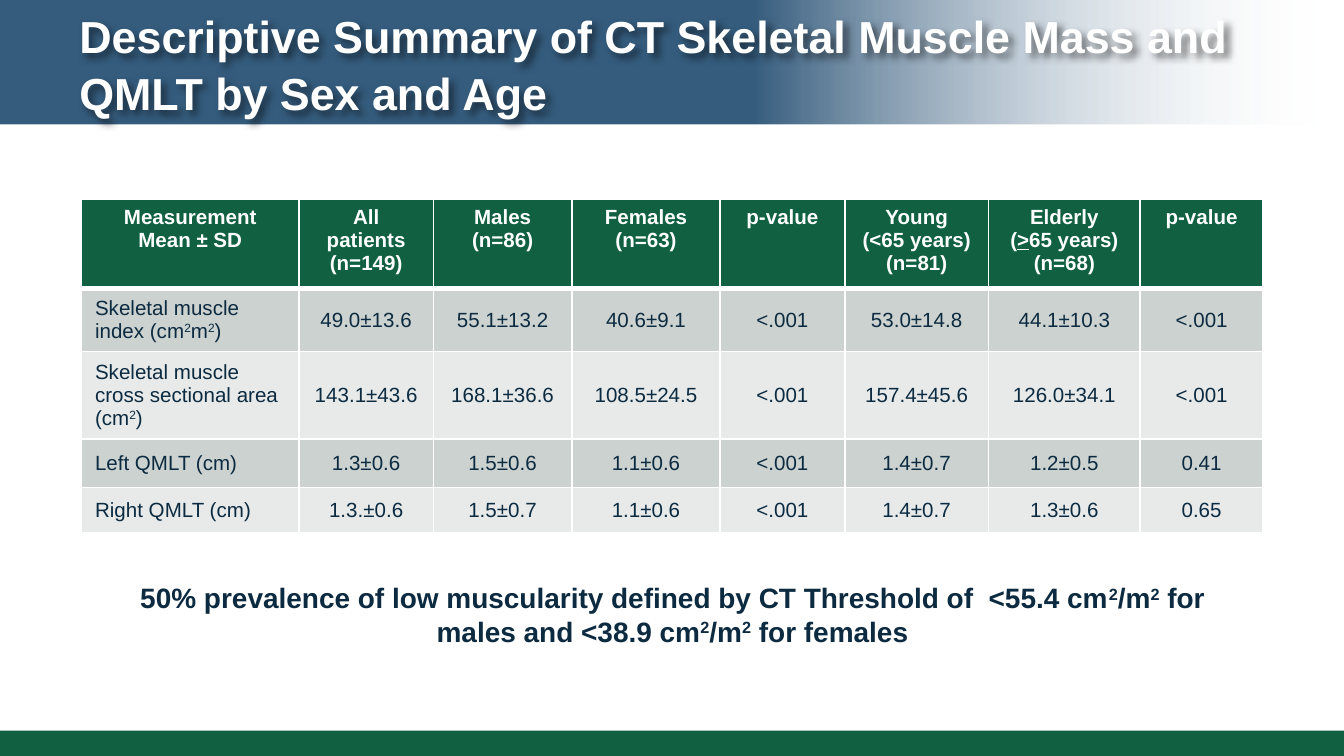
from lxml import etree
from pptx import Presentation
from pptx.dml.color import RGBColor
from pptx.enum import shapes, text
from pptx.oxml import ns
from pptx.util import Pt

NAVY = RGBColor(0x11, 0x3F, 0x66)
INK = RGBColor(0x0C, 0x2A, 0x40)
GREEN = RGBColor(0x10, 0x60, 0x41)
DARK_BAND = RGBColor(0xCC, 0xD2, 0xCF)
LIGHT_BAND = RGBColor(0xE7, 0xEA, 0xE9)
WHITE = RGBColor(0xFF, 0xFF, 0xFF)

# Parts between bars are set as superscript or underlined, see SPECIAL.
TITLE = "Descriptive Summary of CT Skeletal Muscle Mass and QMLT by Sex and Age"
NOTE = ("50% prevalence of low muscularity defined by CT Threshold of  <55.4 cm|2|/m|2|"
        " for males and <38.9 cm|2|/m|2| for females")
ROWS = [
    ["Measurement Mean ± SD", "All patients\n(n=149)", "Males\n(n=86)", "Females\n(n=63)",
     "p-value", "Young\n(<65 years)\n(n=81)", "Elderly\n(|>|65 years)\n(n=68)", "p-value"],
    ["Skeletal muscle index (cm|2|m|2|)", "49.0±13.6", "55.1±13.2", "40.6±9.1",
     "<.001", "53.0±14.8", "44.1±10.3", "<.001"],
    ["Skeletal muscle cross sectional area (cm|2|)", "143.1±43.6", "168.1±36.6",
     "108.5±24.5", "<.001", "157.4±45.6", "126.0±34.1", "<.001"],
    ["Left QMLT (cm)", "1.3±0.6", "1.5±0.6", "1.1±0.6", "<.001", "1.4±0.7", "1.2±0.5", "0.41"],
    ["Right QMLT (cm)", "1.3.±0.6", "1.5±0.7", "1.1±0.6", "<.001", "1.4±0.7", "1.3±0.6", "0.65"],
]
SPECIAL = {"2": ("baseline", "30000"), ">": ("u", "sng")}

WIDTH, HEIGHT = 720, 405
COLUMN_WIDTHS = [116.5, 72, 74.2, 79.5, 66.7, 77.1, 81.2, 65.9]
ROW_HEIGHTS = [48, 32.4, 45.4, 25.9, 24.5]

TITLE_FONT = {"name": "Arial", "size": Pt(24), "bold": True}
NOTE_FONT = {"name": "Arial", "size": Pt(15), "bold": True}
HEADER_FONT = {"name": "Arial", "size": Pt(11), "bold": True}
CELL_FONT = {"name": "Arial", "size": Pt(11), "bold": False}


def write(frame, content, font, color, align):
    """Fill a text frame, one paragraph a line, with special parts between bars."""
    for index, line in enumerate(content.split("\n")):
        paragraph = frame.paragraphs[0] if index == 0 else frame.add_paragraph()
        paragraph.alignment = align
        for position, part in enumerate(line.split("|")):
            run = paragraph.add_run()
            run.text = part
            for name, value in font.items():
                setattr(run.font, name, value)
            run.font.color.rgb = color
            if position % 2:
                run.font._element.set(*SPECIAL[part])


def set_alpha(element, percent):
    for color in element.iter(ns.qn("a:srgbClr")):
        etree.SubElement(color, ns.qn("a:alpha")).set("val", str(percent * 1000))


def add_band(slide, top, height):
    band = slide.shapes.add_shape(shapes.MSO_SHAPE.RECTANGLE, 0, Pt(top), Pt(WIDTH), Pt(height))
    band.shadow.inherit = False
    band.line.fill.background()
    return band


def add_bands(slide):
    header = add_band(slide, 0, 66.5)
    header.fill.gradient()
    header.fill.gradient_angle = 0
    stops = [(0.56, NAVY, 84), (1, WHITE, 0)]
    for stop, (position, color, alpha) in zip(header.fill.gradient_stops, stops):
        stop.position = position
        stop.color.rgb = color
        set_alpha(stop._element, alpha)

    for top, height, color, alpha in [(66.7, 338.3, WHITE, 95), (391.5, 13.5, GREEN, 100)]:
        band = add_band(slide, top, height)
        band.fill.solid()
        band.fill.fore_color.rgb = color
        if alpha < 100:
            set_alpha(band._element.spPr, alpha)


def add_title(slide):
    title = slide.shapes.title
    slide.shapes.element.append(title._element)  # in front of the bands
    title.left, title.top, title.width, title.height = Pt(35.3), 0, Pt(659.5), Pt(67)
    frame = title.text_frame
    frame.word_wrap = True
    frame.auto_size = text.MSO_AUTO_SIZE.NONE
    frame.vertical_anchor = text.MSO_ANCHOR.MIDDLE
    write(frame, TITLE, TITLE_FONT, WHITE, text.PP_ALIGN.LEFT)
    frame.paragraphs[0].line_spacing = 1.05

    effects = etree.SubElement(title._element.spPr, ns.qn("a:effectLst"))
    shadow = etree.SubElement(effects, ns.qn("a:outerShdw"),
                              blurRad=str(Pt(4)), dist=str(Pt(3)), dir="2700000")
    etree.SubElement(shadow, ns.qn("a:srgbClr"), val="000000")
    set_alpha(shadow, 50)


def set_borders(cell, bottom):
    """Draw white borders, 1 point wide but for the bottom one."""
    properties = cell._tc.get_or_add_tcPr()
    for index, (side, width) in enumerate([("L", 1), ("R", 1), ("T", 1), ("B", bottom)]):
        line = etree.Element(ns.qn(f"a:ln{side}"), w=str(Pt(width)))
        fill = etree.SubElement(line, ns.qn("a:solidFill"))
        etree.SubElement(fill, ns.qn("a:srgbClr"), val=str(WHITE))
        properties.insert(index, line)


def add_results_table(slide):
    table = slide.shapes.add_table(
        len(ROWS), len(COLUMN_WIDTHS), Pt(43.7), Pt(106.7),
        Pt(sum(COLUMN_WIDTHS)), Pt(sum(ROW_HEIGHTS))).table
    for column, width in zip(table.columns, COLUMN_WIDTHS):
        column.width = Pt(width)
    for r, (row, height) in enumerate(zip(ROWS, ROW_HEIGHTS)):
        table.rows[r].height = Pt(height)
        header = r == 0
        for c, content in enumerate(row):
            cell = table.cell(r, c)
            cell.fill.solid()
            cell.fill.fore_color.rgb = GREEN if header else DARK_BAND if r % 2 else LIGHT_BAND
            cell.vertical_anchor = text.MSO_ANCHOR.TOP if header else text.MSO_ANCHOR.MIDDLE
            centred = header or c > 0
            write(cell.text_frame, content, HEADER_FONT if header else CELL_FONT,
                  WHITE if header else INK,
                  text.PP_ALIGN.CENTER if centred else text.PP_ALIGN.LEFT)
            set_borders(cell, 3 if header or r == 0 else 1)


def add_note(slide):
    note = slide.shapes.add_textbox(Pt(65.5), Pt(307.5), Pt(589.5), Pt(44))
    note.text_frame.word_wrap = True
    write(note.text_frame, NOTE, NOTE_FONT, INK, text.PP_ALIGN.CENTER)


def main():
    presentation = Presentation()
    presentation.slide_width, presentation.slide_height = Pt(WIDTH), Pt(HEIGHT)
    slide = presentation.slides.add_slide(presentation.slide_layouts[5])
    add_bands(slide)
    add_title(slide)
    add_note(slide)
    add_results_table(slide)
    presentation.save("out.pptx")


if __name__ == "__main__":
    main()
